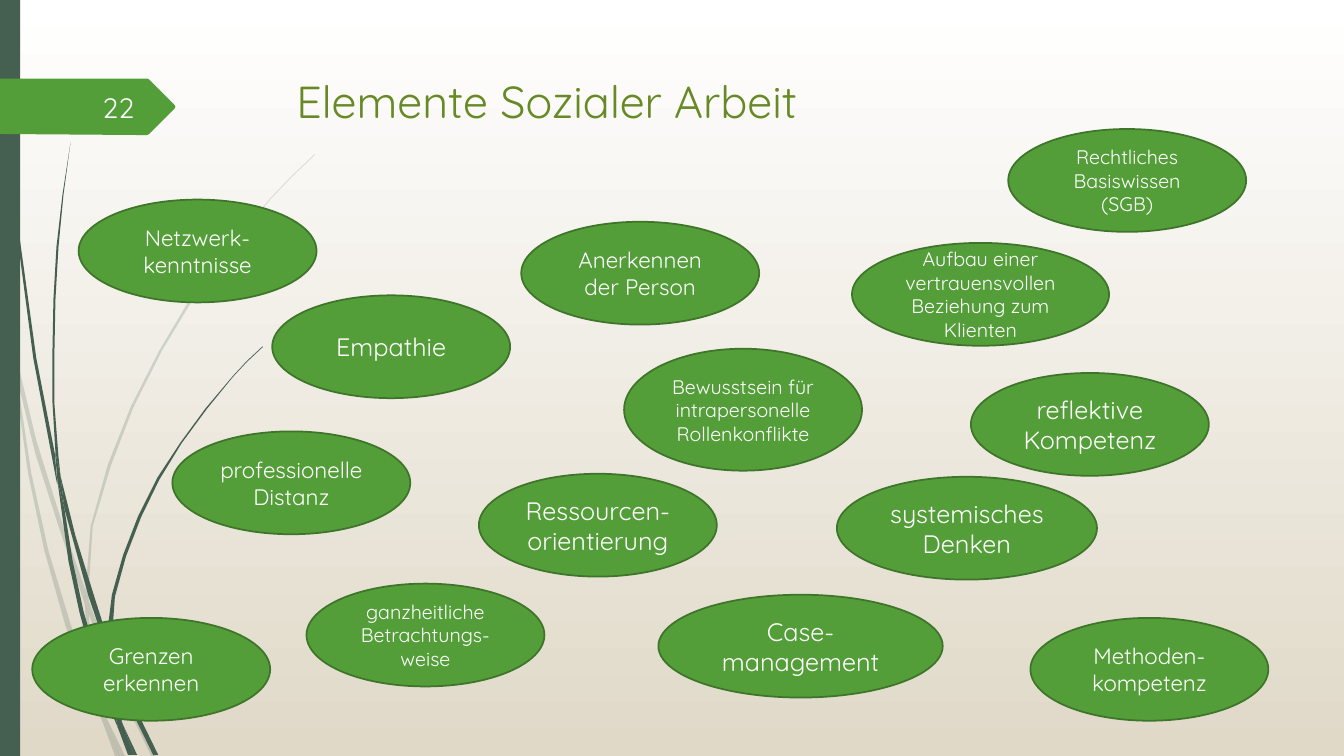
"""Build the slide "Elemente Sozialer Arbeit" with ellipses over a grass motif."""
from lxml.etree import SubElement
from pptx import Presentation
from pptx.dml.color import RGBColor
from pptx.enum.shapes import MSO_SHAPE as Shape
from pptx.enum.text import MSO_ANCHOR as Anchor, PP_ALIGN as Align
from pptx.oxml.ns import qn
from pptx.util import Inches, Pt

WHITE = RGBColor(0xFF, 0xFF, 0xFF)
NUMBER_WHITE = RGBColor(0xFE, 0xFF, 0xFF)
SAND = RGBColor(0xE0, 0xD9, 0xC8)
DARK_GREEN = RGBColor(0x45, 0x5F, 0x51)
GREEN = RGBColor(0x54, 0x9E, 0x39)
EDGE_GREEN = RGBColor(0x3E, 0x75, 0x2A)
TITLE_GREEN = RGBColor(0x67, 0x8A, 0x26)
HUNDREDTH = Inches(0.01)

PALE_BLADES = [
    [(11, 350), (9, 322), (0, 282), (0, 299), (10, 344)],
    [(58, 522), (84, 599), (85, 586), (62, 520), (36, 437), (14, 345), (17, 376), (35, 450)],
    [(92, 607), (88, 596), (88, 610), (123, 694), (150, 750), (155, 750), (127, 692)],
    [(119, 750), (124, 750), (105, 711)],
    [(93, 683), (70, 619), (48, 546), (31, 469), (17, 376), (11, 350), (28, 470), (44, 546),
     (65, 621), (92, 693), (101, 714), (99, 707)],
    [(84, 599), (87, 646), (93, 683), (96, 692), (105, 711), (103, 706), (91, 646), (88, 610),
     (88, 608)],
    [(88, 584), (92, 522), (110, 462), (132, 405), (160, 349), (192, 296), (229, 245), (268, 198),
     (290, 175), (312, 154), (312, 153), (289, 175), (268, 197), (228, 244), (190, 294),
     (158, 348), (130, 403), (107, 461), (90, 522), (85, 584), (85, 586), (88, 596)],
    [(101, 714), (114, 750), (119, 750)],
    [(88, 608), (88, 610), (88, 596), (85, 586), (84, 599)],
    [(96, 692), (93, 683), (99, 707), (101, 714), (119, 750), (105, 711)],
]
DARK_BLADES = [
    [(7, 110), (17, 233), (33, 355), (56, 477), (57, 481), (55, 457), (55, 453), (36, 355),
     (19, 232), (8, 109), (5, 48), (4, 0), (3, 0), (4, 48)],
    [(88, 592), (106, 645), (106, 633), (106, 631), (93, 590), (75, 532), (60, 472), (64, 505)],
    [(113, 649), (110, 641), (111, 656), (132, 708), (152, 749), (157, 749), (136, 706)],
    [(110, 691), (98, 657), (83, 607), (72, 556), (64, 505), (57, 477), (68, 557), (79, 608),
     (93, 659), (111, 708), (117, 722), (116, 717)],
    [(60, 472), (58, 453), (54, 401), (54, 349), (55, 297), (58, 245), (63, 193), (70, 141),
     (62, 193), (56, 245), (53, 297), (52, 349), (52, 399), (55, 449)],
    [(133, 749), (136, 749), (122, 719)],
    [(57, 477), (64, 505), (60, 472), (55, 449), (55, 453)],
    [(111, 633), (114, 592), (125, 552), (140, 513), (158, 476), (180, 440), (205, 406), (231, 374),
     (245, 359), (261, 344), (260, 344), (245, 358), (231, 373), (204, 405), (179, 439),
     (156, 474), (137, 512), (122, 551), (111, 590), (106, 631), (110, 641)],
    [(117, 722), (127, 749), (131, 749)],
    [(106, 645), (110, 691), (116, 706), (122, 719), (121, 716), (111, 656), (109, 651)],
    [(106, 645), (109, 651), (111, 656), (110, 641), (106, 631), (106, 633)],
    [(116, 706), (110, 691), (116, 717), (117, 722), (130, 749), (133, 749), (122, 719)],
]
PAGE_TAG = [(173, 108), (148, 133), (146, 134), (136, 134), (0, 133), (0, 78),
            (146, 78), (148, 79), (173, 104), (174, 106)]
ELEMENTS = [
    ("Empathie", 18, 2.7, 2.93, 2.36, 1.02),
    ("Anerkennen der Person", 16, 5.17, 2.2, 2.36, 1.02),
    ("Aufbau einer vertrauensvollen Beziehung zum Klienten", 14, 8.45, 2.41, 2.55, 1.02),
    ("professionelle Distanz", 16, 1.71, 4.28, 2.36, 1.02),
    ("Bewusstsein für intrapersonelle Rollenkonflikte", 14, 6.19, 3.46, 2.36, 1.21),
    ("Ressourcen-orientierung", 18, 4.75, 4.7, 2.36, 1.02),
    ("reflektive Kompetenz", 18, 9.63, 3.7, 2.36, 1.02),
    ("systemisches Denken", 18, 8.3, 4.73, 2.58, 1.02),
    ("ganzheitliche Betrachtungs-weise", 14, 3.04, 5.79, 2.36, 1.02),
    ("Case-management", 18, 6.53, 5.9, 2.82, 1.02),
    ("Netzwerk-kenntnisse", 16, 0.78, 1.98, 2.36, 1.02),
    ("Rechtliches Basiswissen (SGB)", 14, 10, 1.28, 2.36, 1.02),
    ("Grenzen erkennen", 16, 0.32, 6.13, 2.36, 1.02),
    ("Methoden-kompetenz", 16, 10.22, 6.13, 2.36, 1.02),
]


def add_outline(shapes, points, color):
    builder = shapes.build_freeform(*points[0], scale=HUNDREDTH)
    builder.add_line_segments(points[1:], close=True)
    outline = builder.convert_to_shape()
    outline.shadow.inherit = False
    outline.fill.solid()
    outline.fill.fore_color.rgb = color
    outline.line.fill.background()
    return outline


def write_text(box, text, size, color, align, anchor):
    frame = box.text_frame
    frame.text = text
    frame.word_wrap = True
    frame.vertical_anchor = anchor
    para = frame.paragraphs[0]
    para.alignment = align
    font = para.runs[0].font
    font.name = "Quicksand"
    font.size = Pt(size)
    font.color.rgb = color


deck = Presentation()
deck.slide_width = Inches(13.33)
deck.slide_height = Inches(7.5)
page = deck.slides.add_slide(deck.slide_layouts[6])

backdrop = page.background.fill
backdrop.gradient()
backdrop.gradient_angle = 270
for stop, color in zip(backdrop.gradient_stops, (WHITE, SAND)):
    stop.color.rgb = color

for blades, opacity in ((PALE_BLADES, 20), (DARK_BLADES, 100)):
    grass = page.shapes.add_group_shape()
    for points in blades:
        blade = add_outline(grass.shapes, points, DARK_GREEN)
        if opacity < 100:
            tone = blade.fill._xPr.find(qn("a:solidFill"))[0]
            SubElement(tone, qn("a:alpha"), val=str(opacity * 1000))

side_bar = page.shapes.add_shape(Shape.RECTANGLE, 0, 0, Inches(0.2), Inches(7.5))
side_bar.shadow.inherit = False
side_bar.fill.solid()
side_bar.fill.fore_color.rgb = DARK_GREEN
side_bar.line.fill.background()
add_outline(page.shapes, PAGE_TAG, GREEN)

title = page.shapes.add_textbox(Inches(2.84), Inches(0.68), Inches(9.75), Inches(1.4))
write_text(title, "Elemente Sozialer Arbeit", 32, TITLE_GREEN, Align.LEFT, Anchor.TOP)

for text, size, *bounds in ELEMENTS:
    ellipse = page.shapes.add_shape(Shape.OVAL, *map(Inches, bounds))
    ellipse.shadow.inherit = False
    ellipse.fill.solid()
    ellipse.fill.fore_color.rgb = GREEN
    ellipse.line.color.rgb = EDGE_GREEN
    ellipse.line.width = Pt(1.25)
    write_text(ellipse, text, size, WHITE, Align.CENTER, Anchor.MIDDLE)

page_number = page.shapes.add_textbox(Inches(0.58), Inches(0.86), Inches(0.85), Inches(0.4))
write_text(page_number, "22", 20, NUMBER_WHITE, Align.RIGHT, Anchor.MIDDLE)

deck.save("out.pptx")
